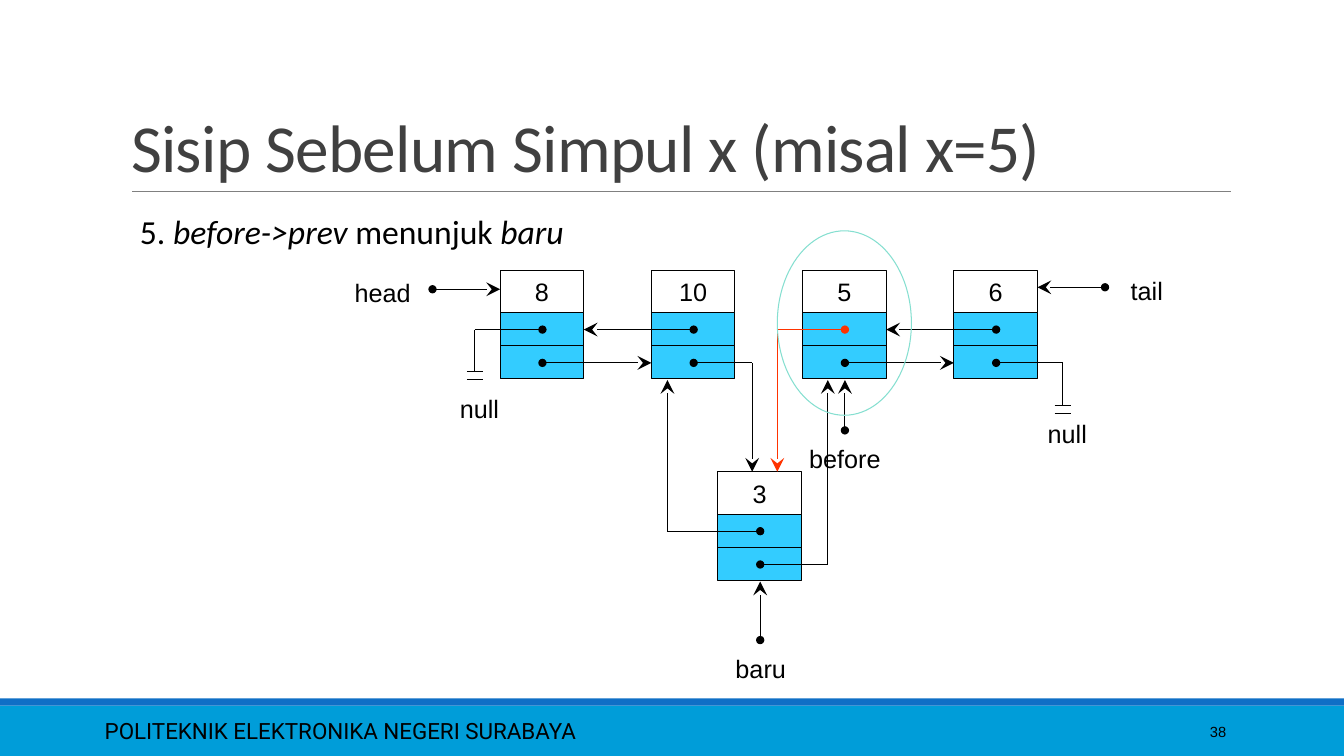
from pptx import Presentation
from pptx.dml.color import RGBColor
from pptx.enum.shapes import MSO_CONNECTOR as LINK, MSO_SHAPE as SHAPE
from pptx.enum.text import MSO_ANCHOR as ANCHOR, PP_ALIGN as ALIGN
from pptx.oxml.ns import qn
from pptx.util import Inches, Pt
from lxml.etree import SubElement

HUES = {"black": "000000", "red": "FF3300", "cell": "33CCFF", "ring": "85DFD0",
        "title": "404040", "rule": "808080", "foot": "009DD9", "band": "0F6FC6"}
color = {name: RGBColor.from_string(hue) for name, hue in HUES.items()}

deck = Presentation()
deck.slide_width, deck.slide_height = Inches(13.33), Inches(7.5)
slide = deck.slides.add_slide(deck.slide_layouts[5])
shapes = slide.shapes


def link(x1, y1, x2, y2, hue="black", dot=False, arrow=False, width=0.75):
    """Draw a line, with an optional dot at its start and arrow at its end."""
    line = shapes.add_connector(LINK.STRAIGHT, Inches(x1), Inches(y1), Inches(x2), Inches(y2))
    line.line.color.rgb = color[hue]
    line.line.width = Pt(width)
    props = line._element.spPr
    stroke = props.find(qn("a:ln"))
    if dot:
        SubElement(stroke, qn("a:headEnd"), type="oval")
    if arrow:
        SubElement(stroke, qn("a:tailEnd"), type="stealth", w="lg", len="lg")
    SubElement(props, qn("a:effectLst"))


def write(box, text, size=18, face="Arial", align=ALIGN.CENTER, anchor=ANCHOR.TOP):
    """Put one line of black text in a shape and return its paragraph."""
    frame = box.text_frame
    frame.word_wrap = True
    frame.vertical_anchor = anchor
    para = frame.paragraphs[0]
    para.text = text
    para.alignment = align
    para.font.size, para.font.name = Pt(size), face
    para.font.color.rgb = color["black"]
    return para


# Footer and title rule
for top, height, hue in [(7, 0.5, "foot"), (6.93, 0.07, "band")]:
    bar = shapes.add_shape(SHAPE.RECTANGLE, 0, Inches(top), deck.slide_width, Inches(height))
    bar.shadow.inherit = False
    bar.fill.solid()
    bar.fill.fore_color.rgb = color[hue]
    bar.line.fill.background()
link(1.31, 1.9, 12.21, 1.9, "rule", width=0.5)
school = shapes.add_textbox(Inches(0.94), Inches(7.05), Inches(8.41), Inches(0.4))
write(school, "POLITEKNIK ELEKTRONIKA NEGERI SURABAYA", 16, "Roboto", ALIGN.LEFT, ANCHOR.MIDDLE)
page = shapes.add_textbox(Inches(10.83), Inches(7.06), Inches(1.43), Inches(0.4))
write(page, "38", 10.5, "Arial", ALIGN.RIGHT, ANCHOR.MIDDLE)

# Title and step
title = shapes.title
title.left, title.top = Inches(1.2), Inches(0.31)
title.width, title.height = Inches(11), Inches(1.59)
para = write(title, "Sisip Sebelum Simpul x (misal x=5)", 48, "Calibri", ALIGN.LEFT, ANCHOR.BOTTOM)
para.font.color.rgb = color["title"]
para.line_spacing = 0.85
para.runs[0].font._element.set("spc", "-50")

step = shapes.add_textbox(Inches(1.29), Inches(2.04), Inches(8.33), Inches(0.5))
para = write(step, "5. ", 24, "Calibri", ALIGN.LEFT)
for text, slant in [("before->prev ", True), ("menunjuk ", False), ("baru", True)]:
    run = para.add_run()
    run.text = text
    run.font.italic = slant

# Nodes: a value cell above the prev and next cells
for value, left, top in [("8", 4.96, 2.68), ("10", 6.46, 2.68), ("5", 7.96, 2.68),
                         ("6", 9.46, 2.68), ("3", 7.12, 4.68)]:
    for drop, height in [(0, 0.42), (0.42, 0.33), (0.75, 0.33)]:
        cell = shapes.add_shape(SHAPE.RECTANGLE, Inches(left), Inches(top + drop),
                                Inches(0.83), Inches(height))
        cell.shadow.inherit = False
        cell.line.color.rgb = color["black"]
        cell.line.width = Pt(0.75)
        if drop:
            cell.fill.solid()
            cell.fill.fore_color.rgb = color["cell"]
        else:
            cell.fill.background()
            write(cell, value, anchor=ANCHOR.MIDDLE)

# Straight pointers
for ends in [(4.29, 2.87, 4.96, 2.87), (10.96, 2.85, 10.29, 2.85),
             (5.38, 3.6, 6.46, 3.6), (6.88, 3.27, 5.79, 3.27),
             (8.38, 3.6, 9.46, 3.6), (9.88, 3.27, 8.79, 3.27),
             (8.38, 4.27, 8.38, 3.77), (7.54, 6.35, 7.54, 5.77)]:
    link(*ends, dot=True, arrow=True)

# Pointers that turn a corner
for x, y, turn, end, hue in [(6.88, 3.6, 7.46, 4.68, "black"), (8.38, 3.27, 7.71, 4.68, "red"),
                             (7.54, 5.27, 6.62, 3.77, "black"), (7.54, 5.6, 8.21, 3.77, "black")]:
    link(x, y, turn, y, hue, dot=True)
    link(turn, y, turn, end, hue, arrow=True)

# Null pointers
for x, y, turn in [(5.38, 3.27, 4.71), (9.88, 3.6, 10.54)]:
    link(x, y, turn, y, dot=True)
    link(turn, y, turn, y + 0.42)
    for drop in (0.42, 0.5):
        link(turn - 0.08, y + drop, turn + 0.08, y + drop)

for text, left, top, width in [("head", 3.38, 2.7, 0.83), ("tail", 10.96, 2.68, 0.83),
                               ("null", 4.38, 3.85, 0.75), ("null", 10.21, 4.1, 0.75),
                               ("before", 7.88, 4.35, 1), ("baru", 6.96, 6.43, 1.17)]:
    write(shapes.add_textbox(Inches(left), Inches(top), Inches(width), Inches(0.4)), text)

ring = shapes.add_shape(SHAPE.OVAL, Inches(7.71), Inches(2.29), Inches(1.33), Inches(1.83))
ring.shadow.inherit = False
ring.fill.background()
ring.line.color.rgb = color["ring"]
ring.line.width = Pt(0.75)

deck.save("out.pptx")
